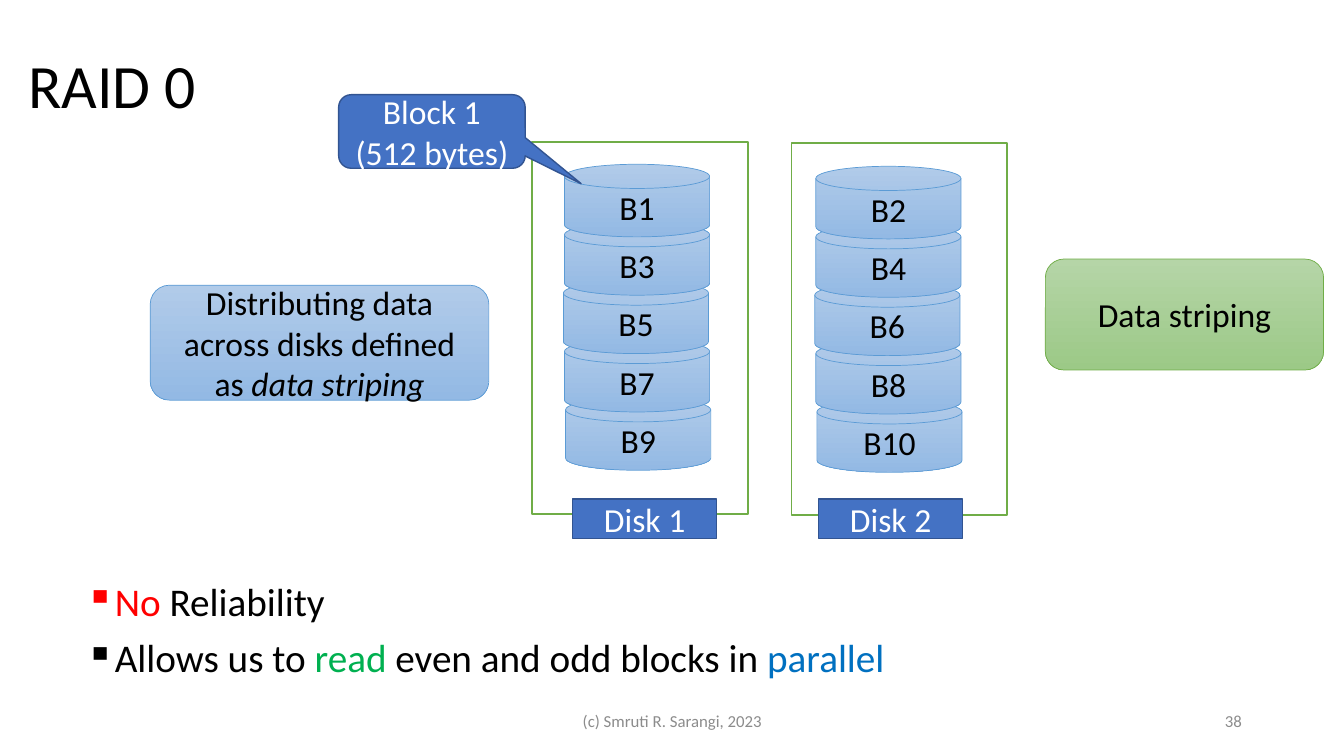
"""Build the RAID 0 slide: blocks striped across two disks."""
from dataclasses import dataclass
from typing import Any

from lxml import etree
from pptx import Presentation
from pptx.dml.color import RGBColor
from pptx.enum.shapes import MSO_SHAPE
from pptx.enum.text import MSO_ANCHOR, PP_ALIGN
from pptx.oxml.ns import qn
from pptx.util import Inches, Pt

PROCESS = MSO_SHAPE.FLOWCHART_PROCESS
CYLINDER = MSO_SHAPE.FLOWCHART_MAGNETIC_DISK
ROUNDED = MSO_SHAPE.ROUNDED_RECTANGLE
CALLOUT = MSO_SHAPE.ROUNDED_RECTANGULAR_CALLOUT
LEFT, CENTER, RIGHT = PP_ALIGN.LEFT, PP_ALIGN.CENTER, PP_ALIGN.RIGHT
TOP, MIDDLE = MSO_ANCHOR.TOP, MSO_ANCHOR.MIDDLE

BLACK = RGBColor(0x00, 0x00, 0x00)
WHITE = RGBColor(0xFF, 0xFF, 0xFF)
GRAY = RGBColor(0x8C, 0x8C, 0x8C)
RED = RGBColor(0xFF, 0x00, 0x00)
READ_GREEN = RGBColor(0x00, 0xB0, 0x50)
PARALLEL_BLUE = RGBColor(0x00, 0x70, 0xC0)
BLUE = RGBColor(0x44, 0x72, 0xC4)
DARK_BLUE = RGBColor(0x32, 0x54, 0x91)
SKY_LINE = RGBColor(0x5B, 0x9B, 0xD5)
SKY_TOP = RGBColor(0xB1, 0xCB, 0xE9)
SKY_BOTTOM = RGBColor(0x93, 0xB9, 0xE4)
GREEN = RGBColor(0x70, 0xAD, 0x47)
LEAF_TOP = RGBColor(0xB5, 0xD5, 0xA7)
LEAF_BOTTOM = RGBColor(0x9C, 0xC9, 0x87)

SLIDE_WIDTH, SLIDE_HEIGHT = Inches(13.33), Inches(7.5)
COLUMN, ROW = SLIDE_WIDTH / 100, SLIDE_HEIGHT / 100
BLOCK_PITCH = 7.72
BLOCK_NUDGES = (0, 0, -0.08, 0, 0.08)


@dataclass(frozen=True)
class Area:
    """A place on the slide in grid columns and rows."""
    column: float
    row: float
    columns: float
    rows: float

    def box(self) -> tuple[int, int, int, int]:
        """Return left, top, width and height as lengths."""
        return (round(self.column * COLUMN), round(self.row * ROW),
                round(self.columns * COLUMN), round(self.rows * ROW))


@dataclass(frozen=True)
class Span:
    """A stretch of text with one look."""
    text: str
    color: RGBColor = BLACK
    italic: bool = False


@dataclass(frozen=True)
class Style:
    """Fill colours from top to bottom, and the outline."""
    fill: tuple[RGBColor, ...]
    line: RGBColor
    line_width: float


@dataclass(frozen=True)
class Disk:
    """A disk with its frame, its blocks and its label."""
    number: int
    frame: Area
    top_block: Area
    label: Area


Lines = tuple[tuple[Span, ...], ...]

SOLID_BLUE = Style((BLUE,), DARK_BLUE, 1)
FRAME = Style((WHITE,), GREEN, 1)
SKY = Style((SKY_TOP, SKY_BOTTOM), SKY_LINE, 0.5)
LEAF = Style((LEAF_TOP, LEAF_BOTTOM), GREEN, 0.5)

DISKS = (
    Disk(1, Area(39.6, 18.8, 16.05, 49.2), Area(42, 21.73, 10.8, 9.6),
         Area(42.6, 66, 10.73, 5.2)),
    Disk(2, Area(58.88, 18.93, 16.05, 49.2), Area(60.7, 22, 10.8, 9.6),
         Area(60.9, 66, 10.73, 5.2)),
)
POINTS: Lines = (
    (Span("No", RED), Span(" Reliability")),
    (Span("Allows us to "), Span("read", READ_GREEN),
     Span(" even and odd blocks in "), Span("parallel", PARALLEL_BLUE)),
)


def apply(target: Any, values: dict[str, Any]) -> None:
    """Set every named attribute on the target."""
    for name, value in values.items():
        setattr(target, name, value)


def write(frame: Any, lines: Lines, size: float, align: Any = CENTER,
          anchor: Any = MIDDLE, spacing: float = 1.0, bullet: str = "") -> None:
    """Fill a text frame with paragraphs of styled spans."""
    apply(frame, {"word_wrap": True, "vertical_anchor": anchor})
    for index, spans in enumerate(lines):
        paragraph = frame.add_paragraph() if index else frame.paragraphs[0]
        apply(paragraph, {"alignment": align, "line_spacing": spacing})
        if bullet:
            if index:
                paragraph.space_before = Pt(10)
            properties = paragraph._p.get_or_add_pPr()
            properties.set("marL", str(Inches(0.25)))
            properties.set("indent", str(-Inches(0.25)))
            etree.SubElement(properties, qn("a:buChar")).set("char", bullet)
        for span in spans:
            run = paragraph.add_run()
            run.text = span.text
            apply(run.font, {"name": "Calibri", "size": Pt(size), "italic": span.italic})
            run.font.color.rgb = span.color


def add_text(slide: Any, area: Area, lines: Lines, size: float, **layout: Any) -> None:
    """Add a text box."""
    write(slide.shapes.add_textbox(*area.box()).text_frame, lines, size, **layout)


def add_figure(slide: Any, kind: Any, area: Area, style: Style, lines: Lines = ()) -> Any:
    """Add a filled, outlined shape with centred text."""
    figure = slide.shapes.add_shape(kind, *area.box())
    figure.shadow.inherit = False
    if len(style.fill) > 1:
        figure.fill.gradient()
        figure.fill.gradient_angle = 270
        for stop, color in zip(figure.fill.gradient_stops, style.fill):
            stop.color.rgb = color
    else:
        figure.fill.solid()
        figure.fill.fore_color.rgb = style.fill[0]
    figure.line.color.rgb = style.line
    figure.line.width = Pt(style.line_width)
    write(figure.text_frame, lines, 24)
    return figure


def add_disk(slide: Any, disk: Disk) -> None:
    """Add a disk frame, its stack of blocks from the bottom up, and its label."""
    add_figure(slide, PROCESS, disk.frame, FRAME)
    top = disk.top_block
    for level, nudge in reversed(tuple(enumerate(BLOCK_NUDGES))):
        place = Area(top.column + nudge, top.row + level * BLOCK_PITCH, top.columns, top.rows)
        block_name = f"B{2 * level + disk.number}"
        add_figure(slide, CYLINDER, place, SKY, ((Span(block_name),),))
    add_figure(slide, PROCESS, disk.label, SOLID_BLUE, ((Span(f"Disk {disk.number}", WHITE),),))


def main() -> None:
    """Build and save the slide."""
    deck = Presentation()
    apply(deck, {"slide_width": SLIDE_WIDTH, "slide_height": SLIDE_HEIGHT})
    slide = deck.slides.add_slide(deck.slide_layouts[6])

    add_text(slide, Area(1.35, 2, 86.25, 19.33), ((Span("RAID 0"),),), 44,
             align=LEFT, spacing=0.9)
    add_text(slide, Area(5.63, 76.4, 88.73, 14.67), POINTS, 28,
             align=LEFT, anchor=TOP, spacing=0.9, bullet="▪")
    add_text(slide, Area(33.15, 92.67, 33.75, 5.33),
             ((Span("(c) Smruti R. Sarangi, 2023", GRAY),),), 12)
    add_text(slide, Area(70.65, 92.67, 22.5, 5.33), ((Span("38", GRAY),),), 12, align=RIGHT)

    for disk in DISKS:
        add_disk(slide, disk)

    block_size = add_figure(slide, CALLOUT, Area(25.2, 12.53, 13.88, 9.73), SOLID_BLUE,
                            ((Span("Block 1", WHITE),), (Span("(512 bytes)", WHITE),)))
    for index, value in enumerate((0.8, 0.71, 0.17)):
        block_size.adjustments[index] = value
    add_figure(slide, ROUNDED, Area(11.18, 37.73, 25.2, 15.2), SKY,
               ((Span("Distributing data across disks defined as "),
                 Span("data striping", italic=True)),))
    add_figure(slide, ROUNDED, Area(77.78, 34.27, 20.7, 14.67), LEAF, ((Span("Data striping"),),))

    deck.save("out.pptx")


if __name__ == "__main__":
    main()
